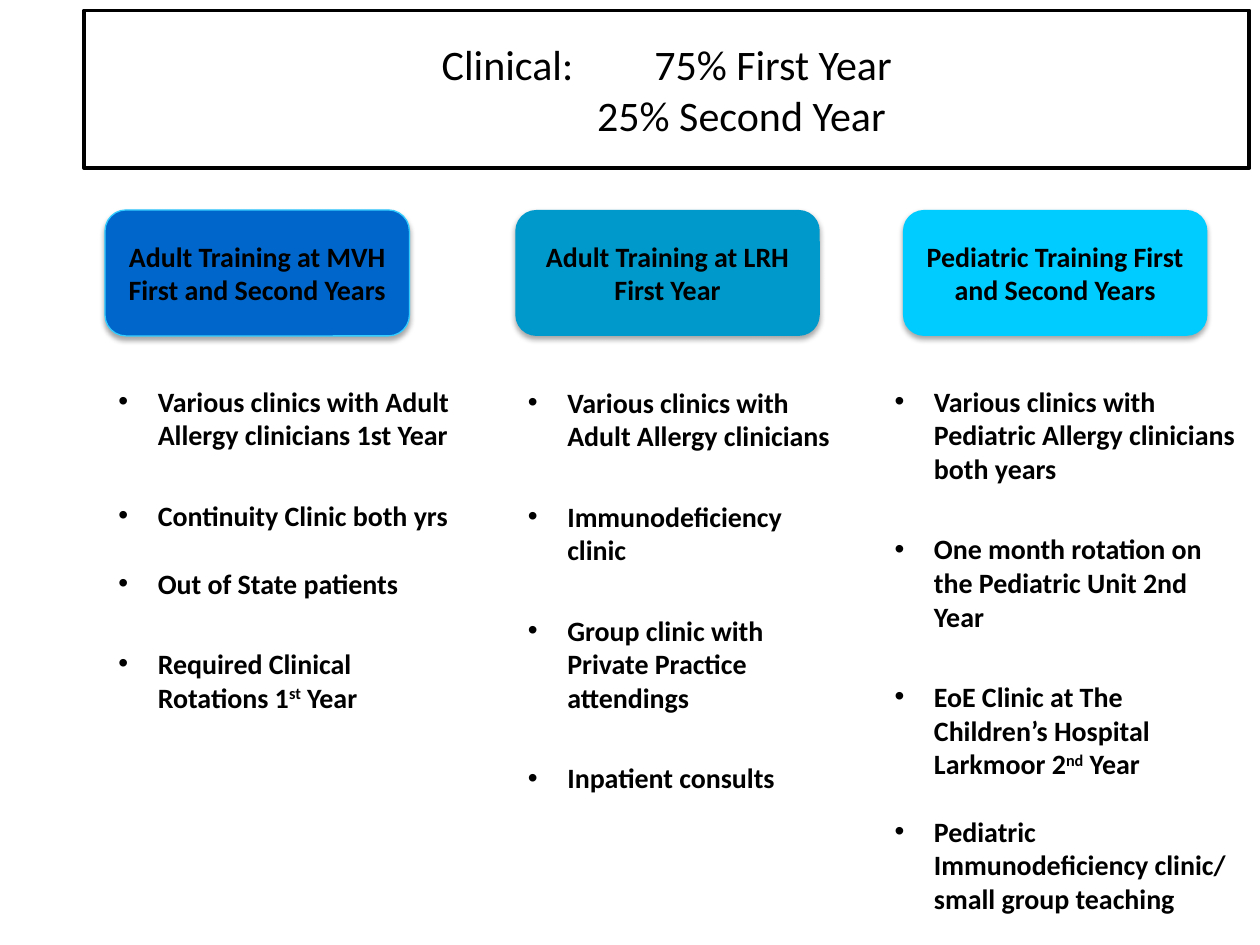
from lxml import etree
from pptx import Presentation
from pptx.dml.color import RGBColor
from pptx.enum.shapes import MSO_SHAPE
from pptx.enum.text import MSO_ANCHOR, MSO_AUTO_SIZE, PP_ALIGN
from pptx.oxml.ns import qn
from pptx.util import Pt

ROUND = MSO_SHAPE.ROUNDED_RECTANGLE
TOP, MIDDLE = MSO_ANCHOR.TOP, MSO_ANCHOR.MIDDLE
LEFT, CENTER = PP_ALIGN.LEFT, PP_ALIGN.CENTER
FIXED = MSO_AUTO_SIZE.NONE
FONT, BLACK = "Calibri", "000000"
WIDE, SLIM = 26.8, 19.5

COLUMNS = [
    {"head": "Adult Training at MVH\nFirst and Second Years",
     "fill": "0066CC", "line": "33CCFF",
     "card": (60, 120, 174, 72), "list": (60.5, 216, 204, 197),
     "items": [("Various clinics with Adult Allergy clinicians 1st Year", 0),
               ("Continuity Clinic both yrs", WIDE),
               ("Out of State patients", SLIM),
               ("Required Clinical Rotations 1^st^ Year", WIDE)]},
    {"head": "Adult Training at LRH First Year",
     "fill": "0099CC", "line": None,
     "card": (294.5, 120, 174, 72), "list": (294.5, 216.5, 192, 243),
     "items": [("Various clinics with Adult Allergy clinicians", 0),
               ("Immunodeficiency clinic", WIDE),
               ("Group clinic with Private Practice attendings", WIDE),
               ("Inpatient consults", WIDE)]},
    {"head": "Pediatric Training First and Second Years",
     "fill": "00CCFF", "line": None,
     "card": (516, 120, 174, 72), "list": (504, 216, 210, 312),
     "items": [("Various clinics with Pediatric Allergy clinicians both years", 0),
               ("One month rotation on the Pediatric Unit 2nd Year", WIDE),
               ("EoE Clinic at The Children’s Hospital Larkmoor 2^nd^ Year", WIDE),
               ("Pediatric Immunodeficiency clinic/ small group teaching", SLIM)]},
]


def color(code):
    """Turn a hex string into a colour."""
    return RGBColor.from_string(code)


def place(shape, box):
    """Move a shape to a box given in points."""
    shape.left, shape.top, shape.width, shape.height = map(Pt, box)


def style(font, size, bold):
    """Set the face, size, weight and colour of a font."""
    font.name, font.size, font.bold = FONT, Pt(size), bold
    font.color.rgb = color(BLACK)


def frame(shape, anchor):
    """Make a text frame wrap at a fixed size."""
    text = shape.text_frame
    text.word_wrap = True
    text.auto_size = FIXED
    text.vertical_anchor = anchor
    return text


def hang(para, width):
    """Give a paragraph a hanging indent."""
    props = para._p.get_or_add_pPr()
    props.set("marL", str(Pt(width)))
    props.set("indent", str(-Pt(width)))
    return props


def shade(shape):
    """Give a shape a soft shadow below it."""
    shape.shadow.inherit = False
    effects = shape._element.spPr.find(qn("a:effectLst"))
    outer = etree.SubElement(
        effects, qn("a:outerShdw"), blurRad=str(Pt(3.1)), dist=str(Pt(1.8)),
        dir="5400000", rotWithShape="0")
    tint = etree.SubElement(outer, qn("a:srgbClr"), val=BLACK)
    etree.SubElement(tint, qn("a:alpha"), val="35000")


def banner(title, box):
    """Fill the framed title."""
    place(title, box)
    title.line.color.rgb = color(BLACK)
    title.line.width = Pt(2.25)
    text = frame(title, MIDDLE)
    text.text = "Clinical:\t\t75% First Year\v\t\t25% Second Year"
    para = text.paragraphs[0]
    para.alignment = CENTER
    para.space_before = Pt(0)
    hang(para, 13.5)
    for run in para.runs:
        style(run.font, 24, False)


def card(slide, box, head, fill, line):
    """Draw a rounded heading card."""
    shape = slide.shapes.add_shape(ROUND, *map(Pt, box))
    shape.fill.solid()
    shape.fill.fore_color.rgb = color(fill)
    if line:
        shape.line.color.rgb = color(line)
        shape.line.width = Pt(0.75)
    else:
        shape.line.fill.background()
    shade(shape)
    text = frame(shape, MIDDLE)
    text.text = head
    for para in text.paragraphs:
        para.alignment = CENTER
        for run in para.runs:
            style(run.font, 16, True)


def bullets(body, box, items):
    """Fill a body placeholder with bullets and raised ordinals."""
    place(body, box)
    text = frame(body, TOP)
    for spot, (item, gap) in enumerate(items):
        para = text.add_paragraph() if spot else text.paragraphs[0]
        props = hang(para, 22.5)
        etree.SubElement(props, qn("a:buFont"), typeface="Arial")
        etree.SubElement(props, qn("a:buChar"), char="•")
        para.alignment = LEFT
        para.space_before = Pt(gap)
        for turn, part in enumerate(item.split("^")):
            run = para.add_run()
            run.text = part
            style(run.font, 16, True)
            if turn % 2:
                run._r.get_or_add_rPr().set("baseline", "30000")


def main():
    """Build and save the slide."""
    deck = Presentation()
    deck.slide_width, deck.slide_height = Pt(720), Pt(540)
    slide = deck.slides.add_slide(deck.slide_layouts[4])
    title, *bodies = slide.placeholders
    banner(title, (48, 6, 666, 90))
    for body, col in zip(bodies, COLUMNS):
        card(slide, col["card"], col["head"], col["fill"], col["line"])
        bullets(body, col["list"], col["items"])
    spare = bodies[-1]._element
    spare.getparent().remove(spare)
    deck.save("out.pptx")


if __name__ == "__main__":
    main()
